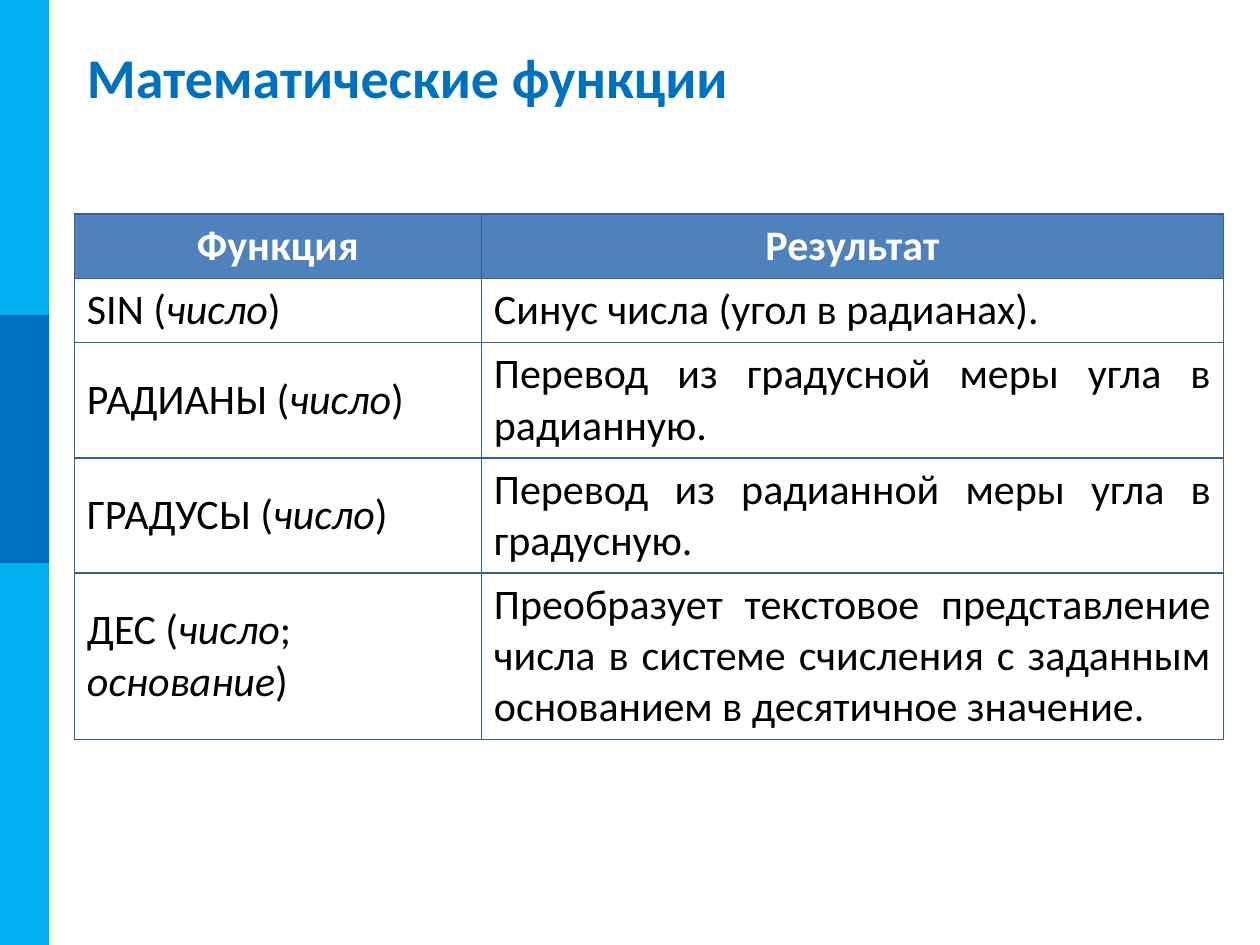
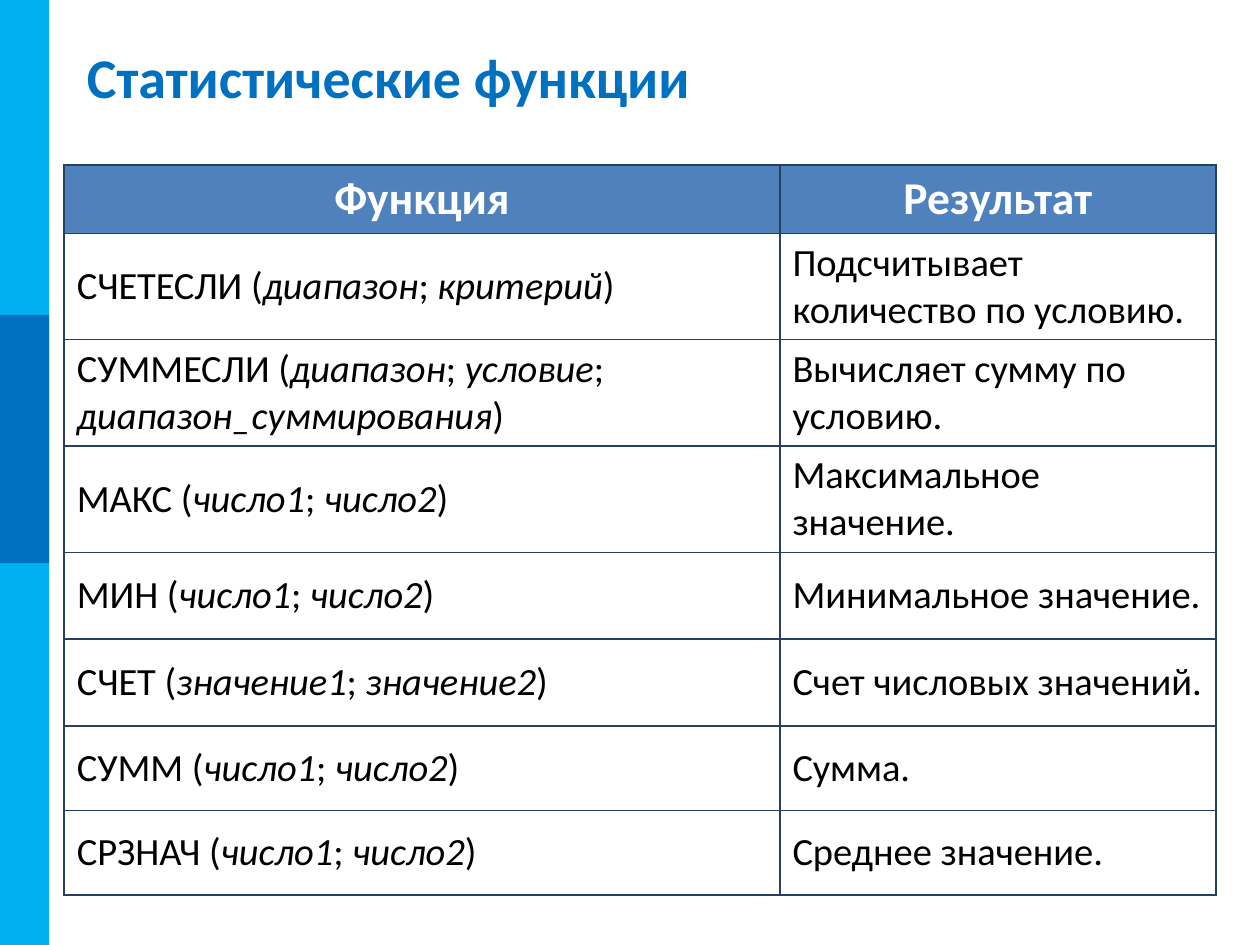
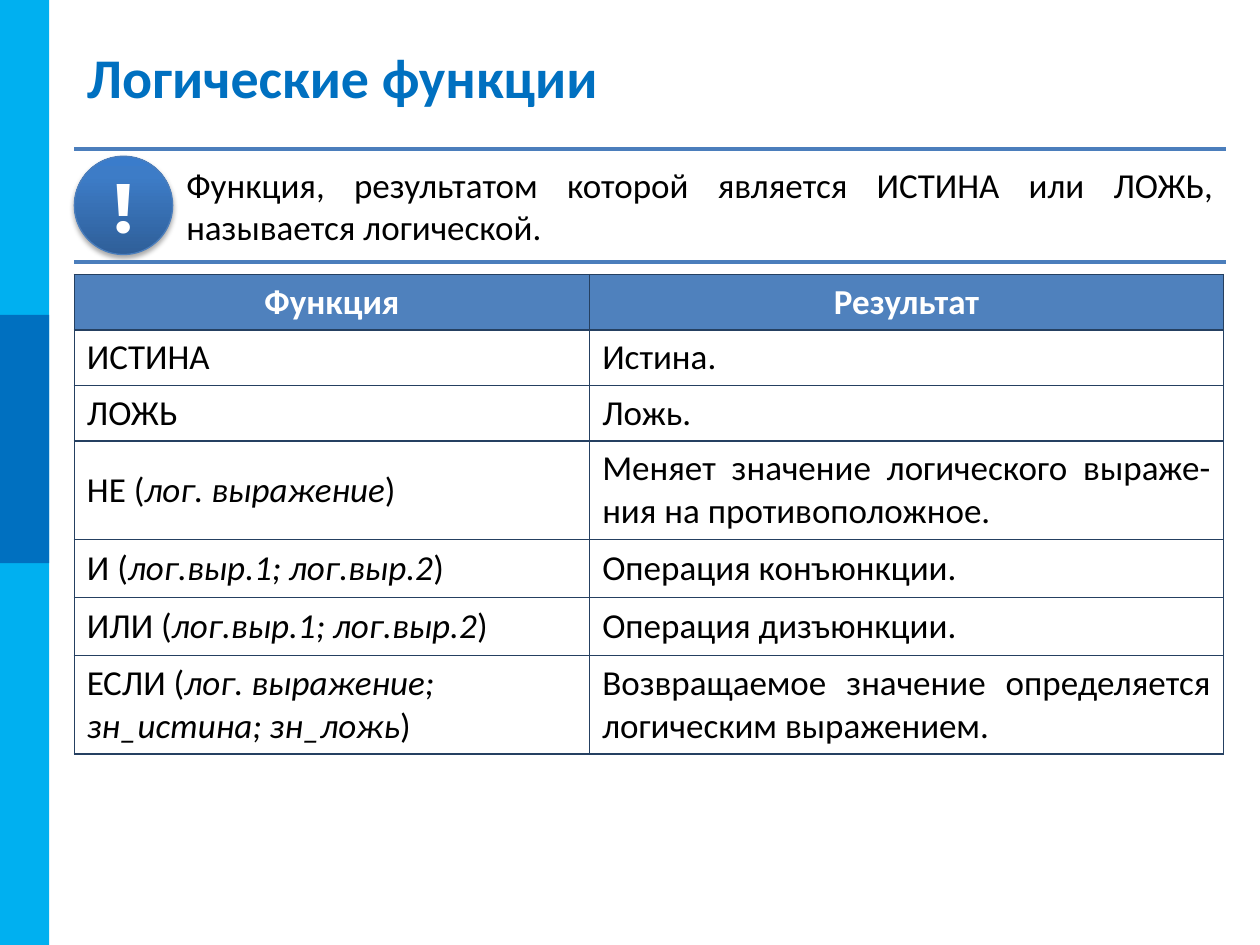
from copy import deepcopy

from lxml import etree
from pptx import Presentation
from pptx.dml.color import RGBColor
from pptx.enum.shapes import MSO_CONNECTOR, MSO_SHAPE
from pptx.enum.text import MSO_ANCHOR, PP_ALIGN
from pptx.oxml.ns import qn
from pptx.util import Inches, Pt

LEFT, CENTER, JUSTIFY = PP_ALIGN.LEFT, PP_ALIGN.CENTER, PP_ALIGN.JUSTIFY
TOP, MIDDLE = MSO_ANCHOR.TOP, MSO_ANCHOR.MIDDLE
RECTANGLE, OVAL = MSO_SHAPE.RECTANGLE, MSO_SHAPE.OVAL
STRAIGHT = MSO_CONNECTOR.STRAIGHT

SKY = RGBColor(0x00, 0xB0, 0xF0)
BLUE = RGBColor(0x00, 0x70, 0xC0)
HEADER_BLUE = RGBColor(0x4F, 0x81, 0xBD)
BORDER_BLUE = RGBColor(0x37, 0x60, 0x92)
BORDER_NAVY = RGBColor(0x25, 0x40, 0x61)
RULE_BLUE = RGBColor(0x4B, 0x7E, 0xBC)
WHITE = RGBColor(0xFF, 0xFF, 0xFF)
BLACK = RGBColor(0x00, 0x00, 0x00)
BADGE_STOPS = [
    (0, RGBColor(0x2F, 0x5F, 0x99)),
    (0.8, RGBColor(0x3D, 0x7C, 0xC7)),
    (1, RGBColor(0x3A, 0x7C, 0xCB)),
]

BODY_FONT = "Calibri"
BADGE_FONT = "Montserrat"
CONTENT_LEFT = 0.59
BAND_WIDTH = 0.39
HEADER = ("Функция", "Результат")

MATH_ROWS = [
    ("SIN (*число*)", "Синус числа (угол в радианах)."),
    ("РАДИАНЫ (*число*)", "Перевод из градусной меры угла в радианную."),
    ("ГРАДУСЫ (*число*)", "Перевод из радианной меры угла в градусную."),
    ("ДЕС (*число*; *основание*)",
     "Преобразует текстовое представление числа в системе счисления "
     "с заданным основанием в десятичное значение."),
]
STATISTICS_ROWS = [
    ("СЧЕТЕСЛИ (*диапазон*; *критерий*)", "Подсчитывает количество по условию."),
    ("СУММЕСЛИ (*диапазон*; *условие*; *диапазон_суммирования*)",
     "Вычисляет сумму по условию."),
    ("МАКС (*число1*; *число2*)", "Максимальное значение."),
    ("МИН (*число1*; *число2*)", "Минимальное значение."),
    ("СЧЕТ (*значение1*; *значение2*)", "Счет числовых значений."),
    ("СУММ (*число1*; *число2*)", "Сумма."),
    ("СРЗНАЧ (*число1*; *число2*)", "Среднее значение."),
]
LOGIC_ROWS = [
    ("ИСТИНА", "Истина."),
    ("ЛОЖЬ", "Ложь."),
    ("НЕ (*лог. выражение*)",
     "Меняет значение логического выраже-ния на противоположное."),
    ("И (*лог.выр.1; лог.выр.2*)", "Операция конъюнкции."),
    ("ИЛИ (*лог.выр.1; лог.выр.2*)", "Операция дизъюнкции."),
    ("ЕСЛИ (*лог. выражение; \nзн_истина; зн_ложь*)",
     "Возвращаемое значение определяется логическим выражением."),
]


def format_paragraph(paragraph, size, color, bold=False, align=LEFT, font=BODY_FONT):
    paragraph.alignment = align
    for run in paragraph.runs:
        run.font.name = font
        run.font.size = Pt(size)
        run.font.bold = bold
        run.font.color.rgb = color


def add_marked_text(paragraph, text):
    for part_index, part in enumerate(text.split("*")):
        for line_index, line in enumerate(part.split("\n")):
            if line_index:
                paragraph.add_line_break()
            if line:
                run = paragraph.add_run()
                run.text = line
                run.font.italic = part_index % 2 == 1


def add_bands(slide, layout):
    for top, height, color in ((0, 7.5, SKY), (2.5, 1.97, BLUE)):
        band = slide.shapes.add_shape(
            RECTANGLE, 0, Inches(top), Inches(BAND_WIDTH), Inches(height))
        band.shadow.inherit = False
        band.fill.solid()
        band.fill.fore_color.rgb = color
        band.line.fill.background()
        layout.shapes.element.append(band.element)


def add_titled_slide(presentation, layout, title_text):
    slide = presentation.slides.add_slide(layout)
    title = slide.shapes.title
    title.left, title.top = Inches(CONTENT_LEFT), Inches(0.3)
    title.width, title.height = Inches(9.06), Inches(0.61)
    title.text_frame.text = title_text
    title.text_frame.vertical_anchor = MIDDLE
    format_paragraph(title.text_frame.paragraphs[0], 32, BLUE, bold=True)
    return slide


def set_borders(cell, color):
    properties = cell._tc.get_or_add_tcPr()
    for index, side in enumerate(("lnL", "lnR", "lnT", "lnB")):
        line = etree.Element(qn("a:" + side), w=str(Pt(1)))
        fill = etree.SubElement(line, qn("a:solidFill"))
        etree.SubElement(fill, qn("a:srgbClr"), val=str(color))
        properties.insert(index, line)


def add_function_table(slide, rows, left, top, widths, heights, border,
                       header_size, body_size, result_align):
    table = slide.shapes.add_table(
        len(heights), len(widths), Inches(left), Inches(top),
        Inches(sum(widths)), Inches(sum(heights))).table
    for column, width in zip(table.columns, widths):
        column.width = Inches(width)
    for row, height in zip(table.rows, heights):
        row.height = Inches(height)
    for row_index, texts in enumerate([HEADER, *rows]):
        is_header = row_index == 0
        for column_index, text in enumerate(texts):
            cell = table.cell(row_index, column_index)
            cell.fill.solid()
            cell.fill.fore_color.rgb = HEADER_BLUE if is_header else WHITE
            cell.vertical_anchor = TOP if is_header else MIDDLE
            set_borders(cell, border)
            paragraph = cell.text_frame.paragraphs[0]
            add_marked_text(paragraph, text)
            if is_header:
                format_paragraph(paragraph, header_size, WHITE, True, CENTER)
            else:
                align = result_align if column_index else LEFT
                format_paragraph(paragraph, body_size, BLACK, align=align)


def add_rule(shapes, top):
    rule = shapes.add_connector(
        STRAIGHT, Inches(CONTENT_LEFT), Inches(top), Inches(9.73), Inches(top))
    rule.line.color.rgb = RULE_BLUE
    rule.line.width = Pt(2.25)
    etree.SubElement(rule.element.spPr, qn("a:effectLst"))


def add_badge(shapes):
    badge = shapes.add_shape(
        OVAL, Inches(CONTENT_LEFT), Inches(1.24), Inches(0.78), Inches(0.78))
    badge.fill.gradient()
    badge.fill.gradient_angle = 90
    stop_list = badge.element.spPr.find(".//" + qn("a:gsLst"))
    stop_list.append(deepcopy(stop_list[0]))
    for stop, (position, color) in zip(badge.fill.gradient_stops, BADGE_STOPS):
        stop.position = position
        stop.color.rgb = color
    badge.line.color.rgb = RULE_BLUE
    badge.line.width = Pt(0.75)
    badge.shadow.inherit = False
    effects = badge.element.spPr.find(qn("a:effectLst"))
    shadow = etree.SubElement(
        effects, qn("a:outerShdw"), blurRad=str(Pt(3.1)), dist=str(Pt(1.8)),
        dir="5400000", rotWithShape="0")
    shadow_color = etree.SubElement(shadow, qn("a:srgbClr"), val=str(BLACK))
    etree.SubElement(shadow_color, qn("a:alpha"), val="35000")
    badge.text_frame.text = "!"
    badge.text_frame.vertical_anchor = MIDDLE
    format_paragraph(badge.text_frame.paragraphs[0], 40, WHITE, True, CENTER, BADGE_FONT)


def add_definition(slide, text):
    shapes = slide.shapes.add_group_shape().shapes
    add_badge(shapes)
    for top in (1.18, 2.08):
        add_rule(shapes, top)
    text_box = shapes.add_textbox(Inches(1.38), Inches(1.25), Inches(8.35), Inches(0.94))
    text_box.text_frame.word_wrap = True
    text_box.text_frame.text = text
    format_paragraph(text_box.text_frame.paragraphs[0], 20, BLACK, align=JUSTIFY)


def main():
    presentation = Presentation()
    presentation.slide_width, presentation.slide_height = Inches(10), Inches(7.5)
    layout = presentation.slide_layouts.get_by_name("Title Only")

    math_slide = add_titled_slide(presentation, layout, "Математические функции")
    add_bands(math_slide, layout)
    add_function_table(
        math_slide, MATH_ROWS, CONTENT_LEFT, 1.7, (3.23, 5.89),
        (0.51, 0.51, 0.91, 0.91, 1.32), BORDER_BLUE, 24, 24, JUSTIFY)

    statistics_slide = add_titled_slide(presentation, layout, "Статистические функции")
    add_function_table(
        statistics_slide, STATISTICS_ROWS, 0.51, 1.31, (5.68, 3.46),
        (0.54, 0.84, 0.84, 0.84, 0.69, 0.69, 0.67, 0.67),
        BORDER_NAVY, 26, 22, LEFT)

    logic_slide = add_titled_slide(presentation, layout, "Логические функции")
    add_function_table(
        logic_slide, LOGIC_ROWS, CONTENT_LEFT, 2.18, (4.09, 5.03),
        (0.44, 0.44, 0.44, 0.78, 0.46, 0.46, 0.78),
        BORDER_NAVY, 20, 20, JUSTIFY)
    add_definition(
        logic_slide,
        "Функция, результатом которой является ИСТИНА или ЛОЖЬ, называется логической.")

    presentation.save("out.pptx")


if __name__ == "__main__":
    main()
